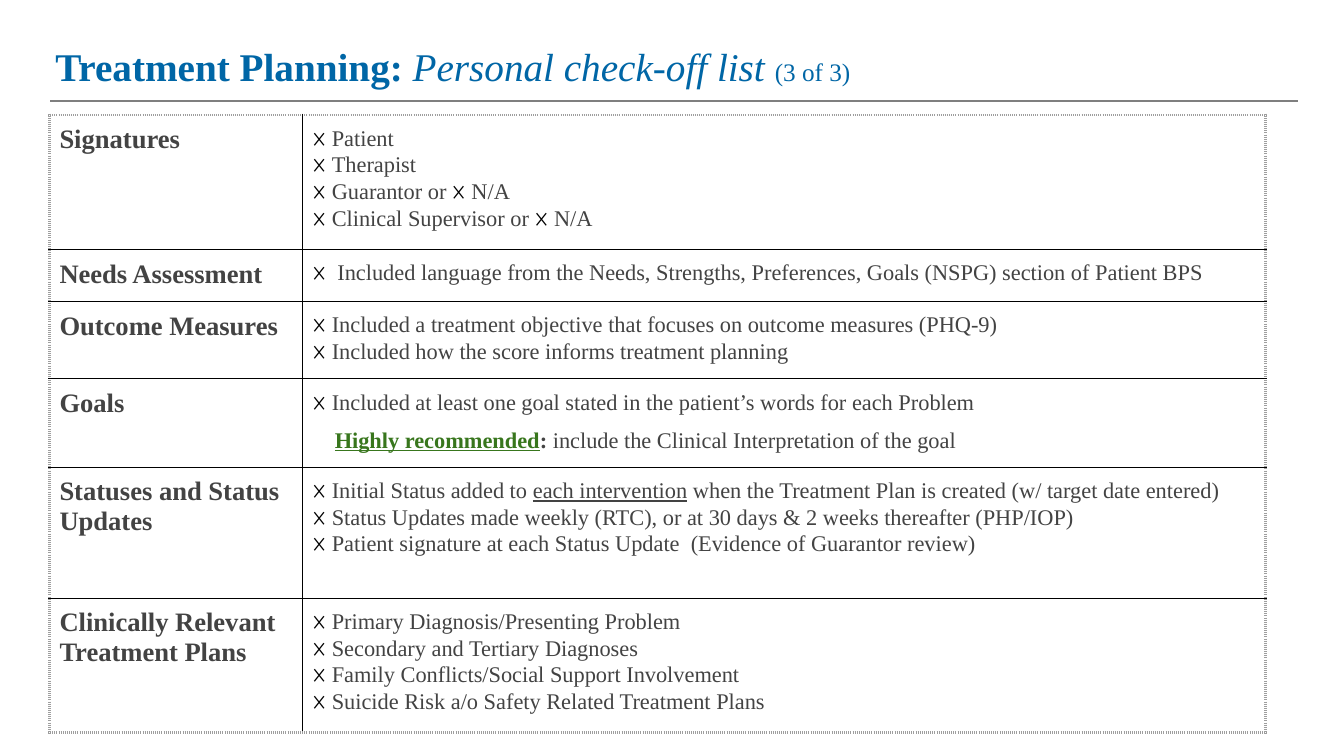
from dataclasses import dataclass

from lxml import etree
from pptx import Presentation
from pptx import util as u
from pptx.dml.color import RGBColor
from pptx.enum import shapes, text
from pptx.oxml import ns

EMU_PER_PX = 9144
FONT = "Times New Roman"
BLUE = RGBColor(0x00, 0x66, 0xA6)
GRAY = RGBColor(0x43, 0x43, 0x43)
GREEN = RGBColor(0x38, 0x76, 0x1D)
BLACK = RGBColor(0x00, 0x00, 0x00)
RULE_GRAY = RGBColor(0x7F, 0x7F, 0x7F)
FRAME_GRAY = RGBColor(0x9E, 0x9E, 0x9E)


@dataclass(frozen=True)
class Span:
    words: str
    size: int = 16
    color: RGBColor = GRAY
    bold: bool = False
    italic: bool = False
    underline: bool = False


@dataclass(frozen=True)
class Line:
    spans: tuple[Span, ...]
    indent: int = 0
    space_before: int = 0


@dataclass(frozen=True)
class Border:
    color: RGBColor
    width: float
    dash: str


@dataclass(frozen=True)
class Section:
    heading: str
    height: int
    lines: tuple[Line, ...]


MARK = Span("𐄂 ", 17, BLACK)
FRAME = Border(FRAME_GRAY, 2.25, "sysDot")
GRID = Border(BLACK, 1, "solid")


def check(*spans: str | Span) -> Line:
    return Line((MARK, *(Span(s) if isinstance(s, str) else s for s in spans)))


TITLE = Line((
    Span("Treatment Planning: ", 28, BLUE, bold=True),
    Span("Personal check-off list ", 28, BLUE, italic=True),
    Span("(3 of 3)", 18, BLUE),
))
COLUMNS = (251, 955)
SECTIONS = (
    Section("Signatures", 130, (
        check("Patient"),
        check("Therapist"),
        check("Guarantor or ", MARK, "N/A"),
        check("Clinical Supervisor or ", MARK, "N/A"),
    )),
    Section("Needs Assessment", 50, (
        check(" Included language from the Needs, Strengths, Preferences, "
              "Goals (NSPG) section of Patient BPS"),
    )),
    Section("Outcome Measures", 75, (
        check("Included a treatment objective that focuses on outcome measures (PHQ-9)"),
        check("Included how the score informs treatment planning"),
    )),
    Section("Goals", 86, (
        check("Included at least one goal stated in the patient’s words for each Problem"),
        Line((
            Span("Highly recommended", color=GREEN, bold=True, underline=True),
            Span(": ", bold=True),
            Span("include the Clinical Interpretation of the goal"),
        ), indent=22, space_before=9),
    )),
    Section("Statuses and Status Updates", 130, (
        check("Initial Status added to ", Span("each intervention", underline=True),
              " when the Treatment Plan is created (w/ target date entered)"),
        check("Status Updates made weekly (RTC), or at 30 days & 2 weeks thereafter (PHP/IOP)"),
        check("Patient signature at each Status Update  (Evidence of Guarantor review)"),
    )),
    Section("Clinically Relevant Treatment Plans", 130, (
        check("Primary Diagnosis/Presenting Problem"),
        check("Secondary and Tertiary Diagnoses"),
        check("Family Conflicts/Social Support Involvement"),
        check("Suicide Risk a/o Safety Related Treatment Plans"),
    )),
)


def px(length: int) -> u.Emu:
    return u.Emu(length * EMU_PER_PX)


def write_lines(frame, lines: tuple[Line, ...]) -> None:
    frame.word_wrap = True
    for index, line in enumerate(lines):
        paragraph = frame.add_paragraph() if index else frame.paragraphs[0]
        if line.indent:
            paragraph._p.get_or_add_pPr().set("marL", str(px(line.indent)))
        if line.space_before:
            paragraph.space_before = u.Pt(line.space_before)
        for span in line.spans:
            run = paragraph.add_run()
            run.text = span.words
            run.font.name = FONT
            run.font.size = u.Pt(span.size)
            run.font.color.rgb = span.color
            run.font.bold = span.bold
            run.font.italic = span.italic
            run.font.underline = span.underline


def set_margins(holder) -> None:
    holder.margin_left = holder.margin_right = px(10)
    holder.margin_top = holder.margin_bottom = px(10)


def set_borders(cell, sides: dict[str, Border]) -> None:
    properties = cell._tc.get_or_add_tcPr()
    for index, (side, border) in enumerate(sides.items()):
        edge = etree.Element(ns.qn(f"a:ln{side}"), w=str(u.Pt(border.width)))
        fill = etree.SubElement(edge, ns.qn("a:solidFill"))
        etree.SubElement(fill, ns.qn("a:srgbClr"), val=str(border.color))
        etree.SubElement(edge, ns.qn("a:prstDash"), val=border.dash)
        properties.insert(index, edge)


def add_title(slide) -> None:
    title = slide.shapes.add_textbox(px(45), px(32), px(976), px(51))
    set_margins(title.text_frame)
    title.text_frame.vertical_anchor = text.MSO_ANCHOR.TOP
    write_lines(title.text_frame, (TITLE,))


def add_rule(slide) -> None:
    rule = slide.shapes.add_connector(
        shapes.MSO_CONNECTOR.STRAIGHT, px(1287), px(100), px(50), px(100))
    rule.line.color.rgb = RULE_GRAY
    rule.line.width = u.Pt(1.5)
    etree.SubElement(rule._element.spPr, ns.qn("a:effectLst"))


def add_checklist(slide) -> None:
    height = sum(section.height for section in SECTIONS)
    checklist = slide.shapes.add_table(
        len(SECTIONS), len(COLUMNS), px(49), px(114), px(sum(COLUMNS)), px(height)).table
    checklist.first_row = checklist.horz_banding = False
    for column, width in zip(checklist.columns, COLUMNS):
        column.width = px(width)
    last = len(SECTIONS) - 1
    for row, section in enumerate(SECTIONS):
        checklist.rows[row].height = px(section.height)
        heading = Line((Span(section.heading, 19, bold=True),))
        for column, lines in enumerate(((heading,), section.lines)):
            cell = checklist.cell(row, column)
            cell.fill.background()
            set_margins(cell)
            write_lines(cell.text_frame, lines)
            set_borders(cell, {
                "L": GRID if column else FRAME,
                "R": FRAME if column else GRID,
                "T": GRID if row else FRAME,
                "B": FRAME if row == last else GRID,
            })


def main() -> None:
    deck = Presentation()
    deck.slide_width, deck.slide_height = px(1333), px(750)
    slide = deck.slides.add_slide(deck.slide_layouts[6])
    add_rule(slide)
    add_title(slide)
    add_checklist(slide)
    deck.save("out.pptx")


if __name__ == "__main__":
    main()
